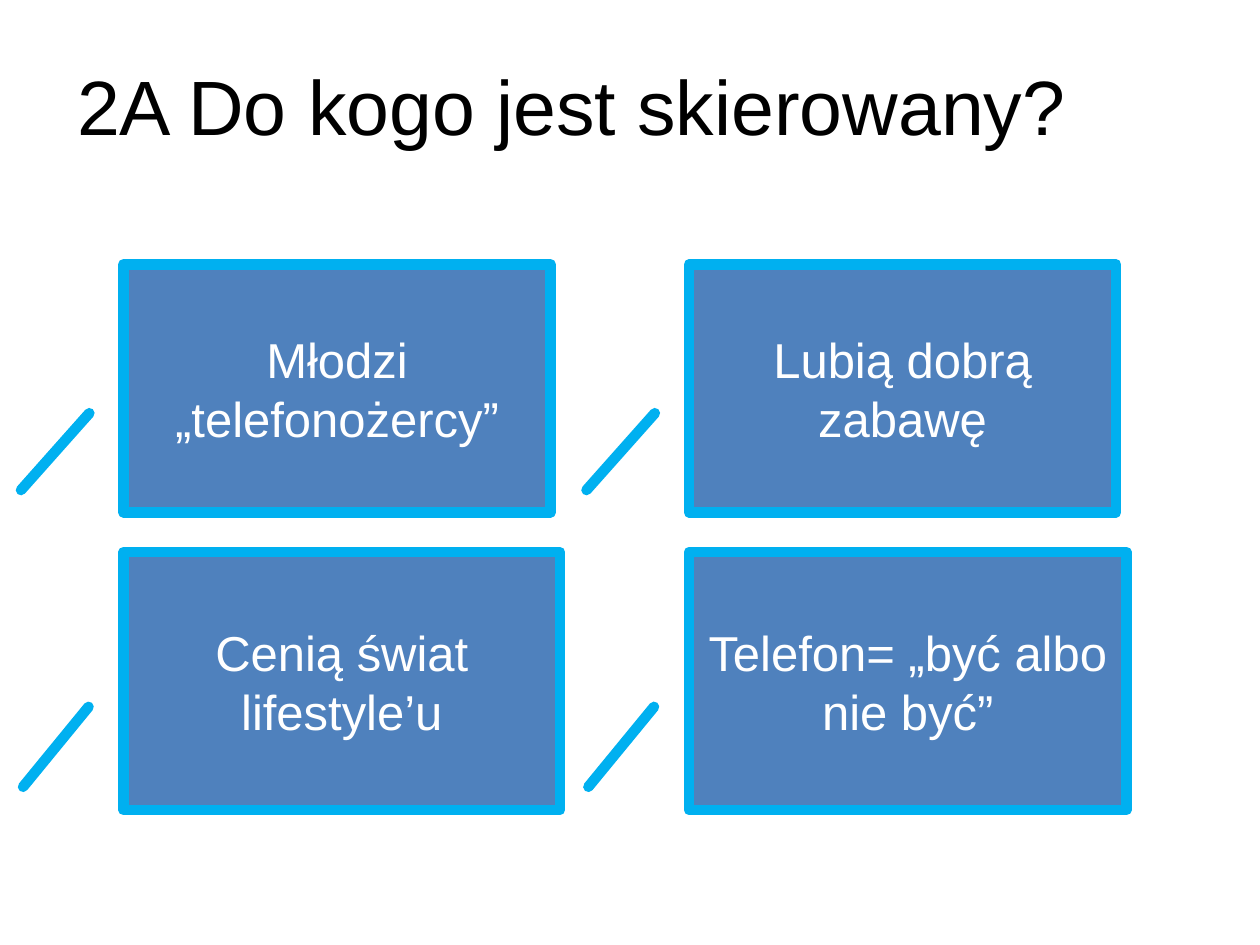
import pptx
import pptx.dml.color
import pptx.enum.shapes
import pptx.enum.text
import pptx.oxml.ns
import pptx.util
from lxml import etree
from pptx.util import Cm

FONT = "Arial"
COLUMN_LEFTS = (2.49, 13.89)
ROWS = (
    {
        "top": 5.33,
        "height": 5.0,
        "widths": (8.61, 8.61),
        "pointer": (0.6, -0.08, 0.91, -0.24),
        "texts": ("Młodzi „telefonożercy”", "Lubią dobrą zabawę"),
    },
    {
        "top": 11.13,
        "height": 5.2,
        "widths": (8.8, 8.82),
        "pointer": (0.6, -0.08, 0.91, -0.23),
        "texts": ("Cenią świat lifestyle’u", "Telefon= „być albo nie być”"),
    },
)


def color(hex_value):
    return pptx.dml.color.RGBColor.from_string(hex_value)


def format_text(text_frame, alignment, size, hex_value):
    text_frame.word_wrap = True
    text_frame.vertical_anchor = pptx.enum.text.MSO_ANCHOR.MIDDLE
    paragraph = text_frame.paragraphs[0]
    paragraph.alignment = alignment
    font = paragraph.runs[0].font
    font.name = FONT
    font.size = pptx.util.Pt(size)
    font.color.rgb = color(hex_value)


def place_title(slide, left, top, width, height):
    title = slide.shapes.title
    title.left, title.top, title.width, title.height = left, top, width, height
    title.text_frame.text = "2A Do kogo jest skierowany?"
    format_text(title.text_frame, pptx.enum.text.PP_ALIGN.LEFT, 44, "000000")


def add_callout(slide, left, top, width, height, text, pointer):
    shape = slide.shapes.add_shape(
        pptx.enum.shapes.MSO_SHAPE.LINE_CALLOUT_1, left, top, width, height
    )
    for index, value in enumerate(pointer):
        shape.adjustments[index] = value
    shape.shadow.inherit = False
    shape.fill.solid()
    shape.fill.fore_color.rgb = color("4F81BD")
    shape.line.color.rgb = color("00B0F0")
    shape.line.width = pptx.util.Pt(6)
    outline = shape.line._get_or_add_ln()
    outline.set("cap", "rnd")
    etree.SubElement(outline, pptx.oxml.ns.qn("a:round"))
    shape.text_frame.text = text
    format_text(shape.text_frame, pptx.enum.text.PP_ALIGN.CENTER, 28, "FFFFFF")


def add_callout_row(slide, row):
    for left, width, text in zip(COLUMN_LEFTS, row["widths"], row["texts"]):
        add_callout(
            slide, Cm(left), Cm(row["top"]), Cm(width), Cm(row["height"]),
            text, row["pointer"],
        )


def main():
    presentation = pptx.Presentation()
    presentation.slide_width = Cm(25.4)
    presentation.slide_height = Cm(19.05)
    slide = presentation.slides.add_slide(presentation.slide_layouts[5])
    slide.background.fill.solid()
    slide.background.fill.fore_color.rgb = color("FFFFFF")
    place_title(slide, Cm(1.3), Cm(0.53), Cm(22.86), Cm(3.18))
    for row in ROWS:
        add_callout_row(slide, row)
    presentation.save("out.pptx")


if __name__ == "__main__":
    main()
